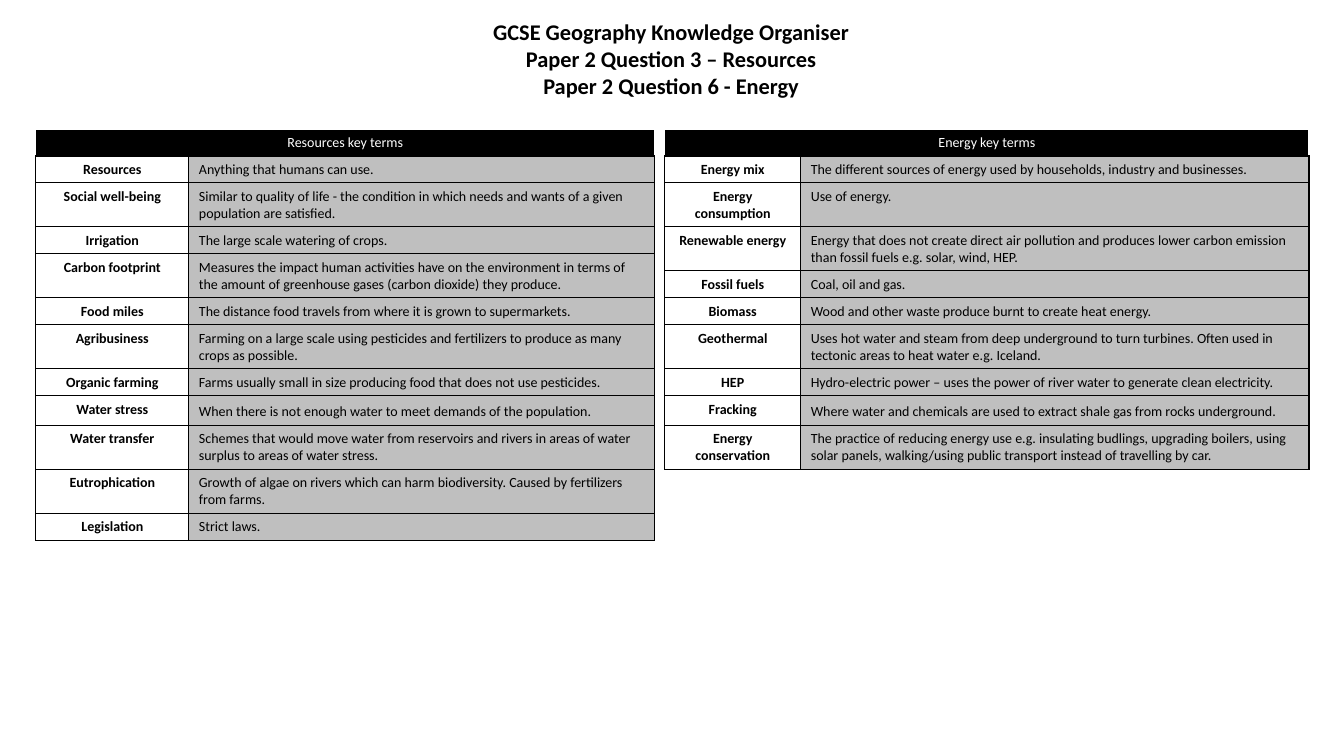
from dataclasses import dataclass
from lxml import etree
from pptx import Presentation
from pptx import util as u
from pptx.dml import color
from pptx.enum import text
from pptx.oxml import ns


@dataclass(frozen=True)
class Theme:
    font: str = "Calibri"
    black: str = "000000"
    white: str = "FFFFFF"
    grey: str = "BFBFBF"
    title_size: int = 16
    body_size: int = 10
    border: float = 1


theme = Theme()


def write(frame, words, size=theme.body_size, ink=theme.black, bold=False,
          align=text.PP_ALIGN.CENTER, spacing=None):
    for index, line in enumerate(words.split("\n")):
        para = frame.add_paragraph() if index else frame.paragraphs[0]
        para.alignment = align
        para.line_spacing = spacing
        span = para.add_run()
        span.text = line
        span.font.name = theme.font
        span.font.size = u.Pt(size)
        span.font.bold = bold
        span.font.color.rgb = color.RGBColor.from_string(ink)


def dress(cell, fill, edge=theme.black):
    properties = cell._tc.get_or_add_tcPr()
    for side in ("lnL", "lnR", "lnT", "lnB"):
        line = etree.SubElement(properties, ns.qn(f"a:{side}"), w=str(u.Pt(theme.border)))
        solid = etree.SubElement(line, ns.qn("a:solidFill"))
        etree.SubElement(solid, ns.qn("a:srgbClr"), val=theme.black if side == "lnB" else edge)
    cell.fill.solid()
    cell.fill.fore_color.rgb = color.RGBColor.from_string(fill)


resources = [
    ("Resources", "Anything that humans can use.", 1),
    ("Social well-being", "Similar to quality of life - the condition in which needs and wants of a given population are satisfied.", 2),
    ("Irrigation", "The large scale watering of crops.", 1),
    ("Carbon footprint", "Measures the impact human activities have on the environment in terms of the amount of greenhouse gases (carbon dioxide) they produce.", 2),
    ("Food miles", "The distance food travels from where it is grown to supermarkets.", 1),
    ("Agribusiness", "Farming on a large scale using pesticides and fertilizers to produce as many crops as possible.", 2),
    ("Organic farming", "Farms usually small in size producing food that does not use pesticides.", 1),
    ("Water stress", "When there is not enough water to meet demands of the population.", 1.15),
    ("Water transfer", "Schemes that would move water from reservoirs and rivers in areas of water surplus to areas of water stress.", 2),
    ("Eutrophication", "Growth of algae on rivers which can harm biodiversity. Caused by fertilizers from farms.", 2),
    ("Legislation", "Strict laws.", 1),
]
energy = [
    ("Energy mix", "The different sources of energy used by households, industry and businesses.", 1),
    ("Energy consumption", "Use of energy.", 2),
    ("Renewable energy", "Energy that does not create direct air pollution and produces lower carbon emission than fossil fuels e.g. solar, wind, HEP.", 2),
    ("Fossil fuels", "Coal, oil and gas.", 1),
    ("Biomass", "Wood and other waste produce burnt to create heat energy.", 1),
    ("Geothermal", "Uses hot water and steam from deep underground to turn turbines. Often used in tectonic areas to heat water e.g. Iceland.", 2),
    ("HEP", "Hydro-electric power – uses the power of river water to generate clean electricity.", 1),
    ("Fracking", "Where water and chemicals are used to extract shale gas from rocks underground.", 1.15),
    ("Energy conservation", "The practice of reducing energy use e.g. insulating budlings, upgrading boilers, using solar panels, walking/using public transport instead of travelling by car.", 2),
]
glossaries = [
    ("Resources key terms", resources, 0.9, (3.86, 11.74)),
    ("Energy key terms", energy, 16.75, (3.43, 12.81)),
]

deck = Presentation()
deck.slide_width, deck.slide_height = u.Cm(33.87), u.Cm(19.05)
page = deck.slides.add_slide(deck.slide_layouts[6])

title_box = page.shapes.add_textbox(u.Cm(0.61), u.Cm(0.33), u.Cm(32.61), u.Cm(2.31))
title_box.text_frame.word_wrap = True
title_box.text_frame.auto_size = text.MSO_AUTO_SIZE.SHAPE_TO_FIT_TEXT
write(title_box.text_frame,
      "GCSE Geography Knowledge Organiser\nPaper 2 Question 3 – Resources\nPaper 2 Question 6 - Energy",
      size=theme.title_size, bold=True)

for heading, terms, left, widths in glossaries:
    heights = [0.25 + 0.43 * lines for lines in [1] + [term[2] for term in terms]]
    frame = page.shapes.add_table(len(heights), 2, u.Cm(left), u.Cm(3.25),
                                  u.Cm(sum(widths)), u.Cm(sum(heights)))
    table = frame.table
    table.first_row = table.horz_banding = False
    for column, width in zip(table.columns, widths):
        column.width = u.Cm(width)
    for row, height in zip(table.rows, heights):
        row.height = u.Cm(height)

    for cell in table.rows[0].cells:
        dress(cell, theme.black, edge=theme.white)
    table.cell(0, 0).merge(table.cell(0, 1))
    write(table.cell(0, 0).text_frame, heading, ink=theme.white)

    for index, (term, meaning, lines) in enumerate(terms, start=1):
        term_cell, meaning_cell = table.rows[index].cells
        dress(term_cell, theme.white)
        dress(meaning_cell, theme.grey)
        write(term_cell.text_frame, term, bold=True)
        write(meaning_cell.text_frame, meaning, align=text.PP_ALIGN.LEFT,
              spacing=lines if lines == 1.15 else None)

deck.save("out.pptx")
